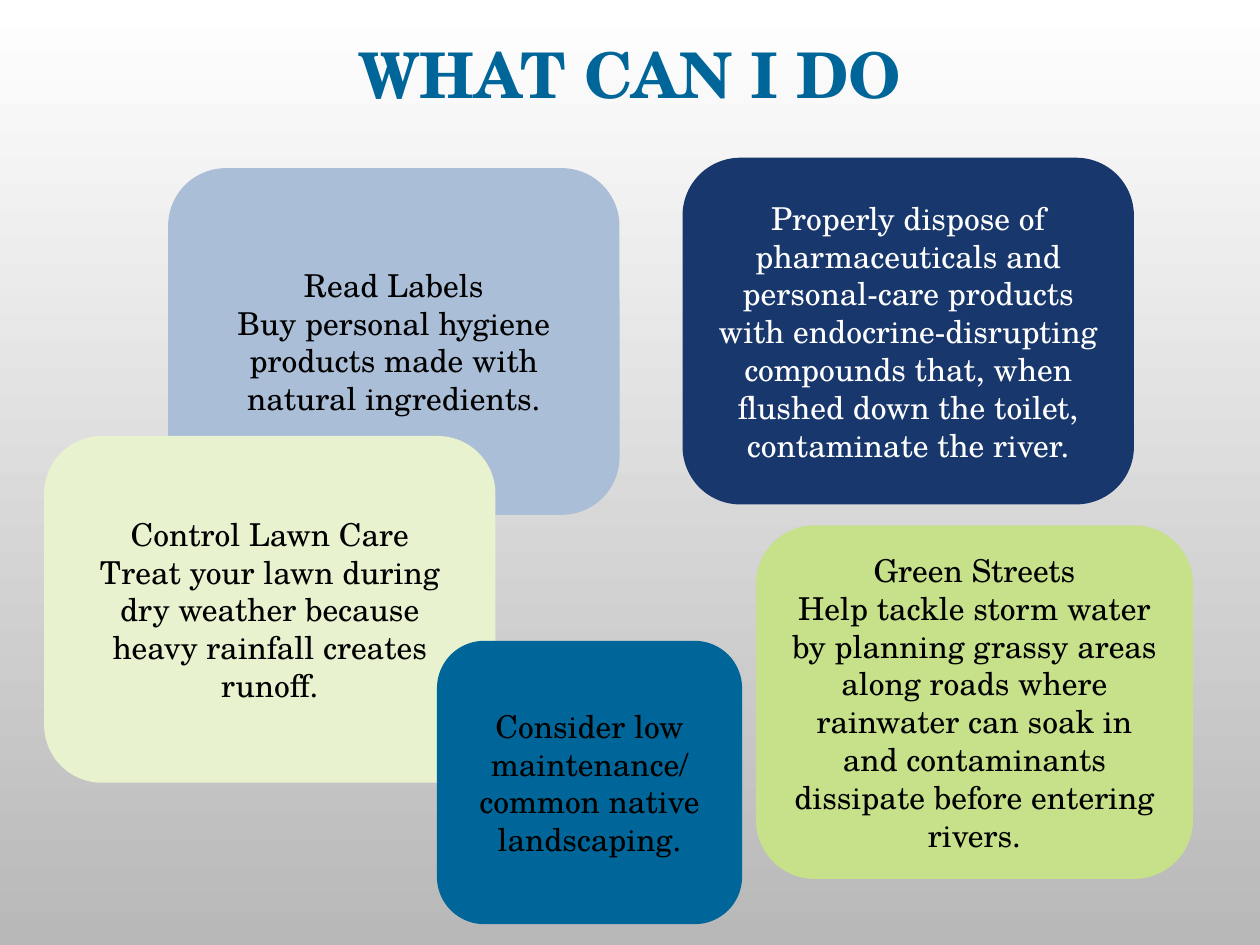
from pptx import Presentation
from pptx import util as u
from pptx.dml import color
from pptx.enum import shapes, text

theme = {
    "font": "TeX Gyre Schola",
    "head": 36, "body": 18,
    "top": "FFFFFF", "base": "B8B8B8",
    "teal": "006699", "black": "000000", "white": "FFFFFF",
    "mist": "AABED7", "navy": "18376C", "pale": "E8F2CF", "lime": "C7E08A",
}


def tint(name):
    return color.RGBColor.from_string(theme[name])


def add_run(para, words, size, ink, bold=False):
    para.alignment = text.PP_ALIGN.CENTER
    run = para.add_run()
    run.text = words
    run.font.name = theme["font"]
    run.font.size = u.Pt(theme[size])
    run.font.bold = bold
    run.font.color.rgb = tint(ink)


deck = Presentation()
deck.slide_width, deck.slide_height = u.Cm(25.4), u.Cm(19.05)
slide = deck.slides.add_slide(deck.slide_layouts[5])

back = slide.background.fill
back.gradient()
back.gradient_angle = 270
for stop, name in zip(back.gradient_stops, ("top", "base")):
    stop.color.rgb = tint(name)

title = slide.shapes.title
title.left, title.top = u.Cm(1.9), u.Cm(-0.63)
title.width, title.height = u.Cm(21.59), u.Cm(4.41)
title.text_frame.vertical_anchor = text.MSO_ANCHOR.MIDDLE
line = title.text_frame.paragraphs[0]
line.line_spacing = 0.9
add_run(line, "WHAT CAN I DO", "head", "teal", True)

wide = (9.1, 6.99)
tips = [
    ((3.39, 3.39), wide, "mist", "black",
     ["Read Labels",
      "Buy personal hygiene products made with natural ingredients."]),
    ((13.76, 3.18), wide, "navy", "white",
     ["Properly dispose of pharmaceuticals and personal-care products with "
      "endocrine-disrupting compounds that, when flushed down the toilet, "
      "contaminate the river."]),
    ((0.89, 8.79), wide, "pale", "black",
     ["Control Lawn Care",
      "Treat your lawn during dry weather because heavy rainfall creates runoff."]),
    ((15.24, 10.59), (8.81, 7.13), "lime", "black",
     ["Green Streets",
      "Help tackle storm water by planning grassy areas along roads where "
      "rainwater can soak in and contaminants dissipate before entering rivers."]),
    ((8.81, 12.92), (6.15, 5.71), "teal", "black",
     ["Consider low maintenance/", "common native landscaping."]),
]

for spot, size, fill, ink, lines in tips:
    card = slide.shapes.add_shape(
        shapes.MSO_SHAPE.ROUNDED_RECTANGLE, *map(u.Cm, spot + size))
    card.shadow.inherit = False
    card.fill.solid()
    card.fill.fore_color.rgb = tint(fill)
    card.line.fill.background()
    frame = card.text_frame
    frame.word_wrap = True
    frame.vertical_anchor = text.MSO_ANCHOR.MIDDLE
    for i, words in enumerate(lines):
        para = frame.add_paragraph() if i else frame.paragraphs[0]
        add_run(para, words, "body", ink)

deck.save("out.pptx")
